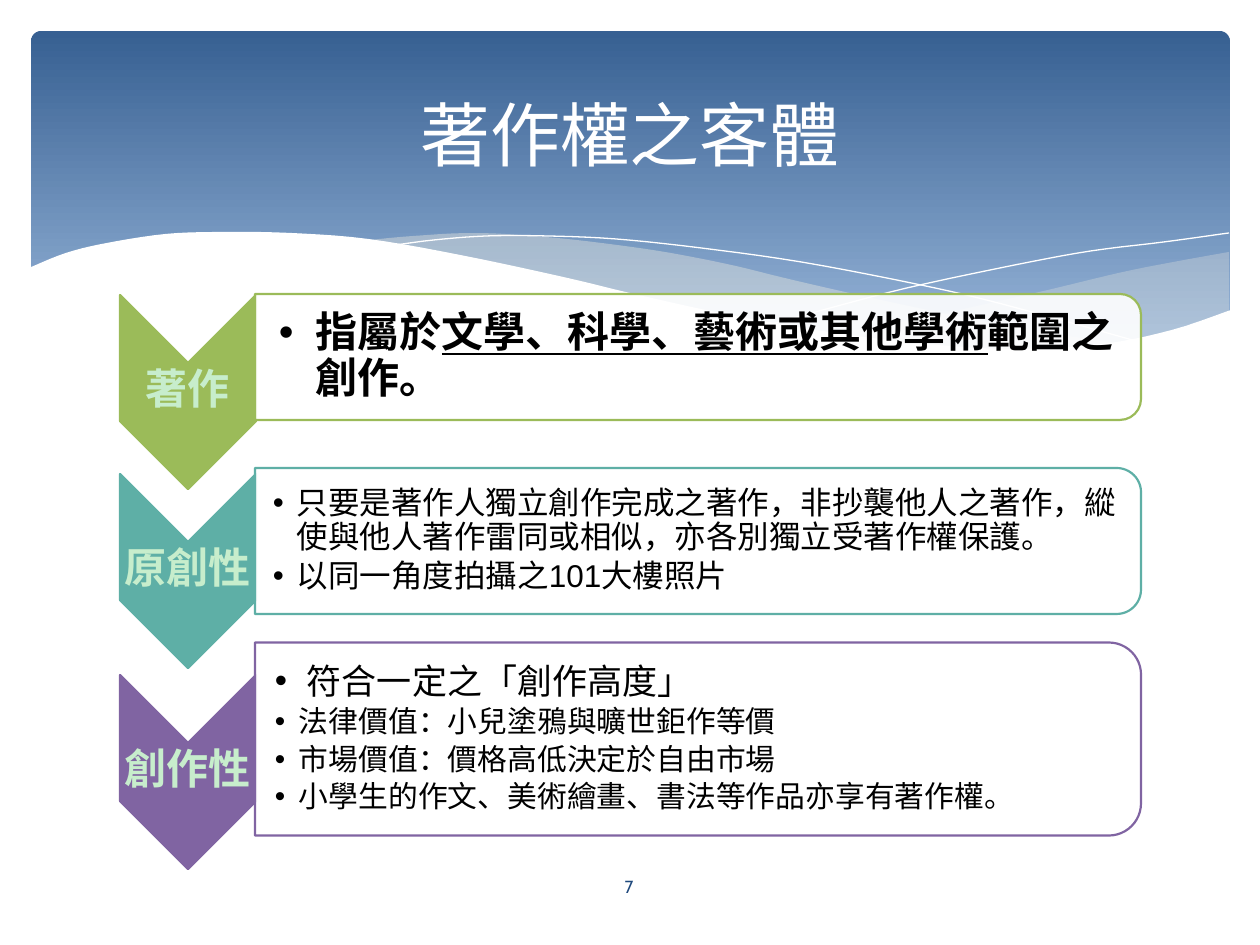
"""Builds the slide on the objects of copyright as three chevron steps under a wave banner."""
from lxml.etree import SubElement
from pptx import Presentation
from pptx.dml.color import RGBColor
from pptx.enum.shapes import MSO_SHAPE
from pptx.enum.text import MSO_ANCHOR, PP_ALIGN
from pptx.oxml.ns import qn
from pptx.util import Pt

PX = 914400 / 126
WHITE = RGBColor(0xFF, 0xFF, 0xFF)
BLACK = RGBColor(0x00, 0x00, 0x00)
MINT = RGBColor(0xC7, 0xED, 0xCC)
SAND = RGBColor(0xEE, 0xEC, 0xE1)
NAVY = RGBColor(0x1F, 0x49, 0x7D)
BANNER_TOP = RGBColor(0x37, 0x60, 0x92)
BANNER_END = RGBColor(0x95, 0xB3, 0xD7)
GREEN = RGBColor(0x9B, 0xBB, 0x59)
TEAL = RGBColor(0x5E, 0xAF, 0xA6)
PURPLE = RGBColor(0x80, 0x64, 0xA2)
CJK = "Noto Sans CJK SC"

RIGHT_BAND_TOP = [(1229, 252), (1179, 261), (1123, 272), (1048, 290), (982, 305),
                  (919, 319), (833, 334)]
RIGHT_BAND_BOTTOM = [(833, 334), (888, 342), (938, 346), (984, 349), (1038, 349),
                     (1087, 347), (1130, 340), (1169, 331), (1213, 317), (1229, 311)]
MIDDLE_BAND_TOP = [(1125, 344), (1055, 334), (977, 320), (890, 302), (793, 280), (736, 266),
                   (682, 255), (632, 247), (557, 238), (479, 233), (413, 236), (360, 241)]
MIDDLE_BAND_BOTTOM = [(360, 241), (431, 251), (509, 266), (566, 280), (668, 302), (757, 322),
                      (838, 335), (910, 345), (974, 349), (1031, 350), (1080, 349), (1125, 344)]
FALLING_LINE = [(389, 246), (434, 240), (487, 236), (546, 236), (616, 239), (701, 248),
                (801, 262), (916, 284), (1002, 304), (1143, 343)]
RISING_LINE = [(772, 324), (823, 310), (907, 288), (1015, 265), (1091, 251), (1164, 242),
               (1229, 233)]
PAGE_WAVE = [(1231, 310), (1172, 330), (1103, 344), (1019, 349), (937, 345), (842, 334),
             (730, 315), (634, 294), (563, 277), (460, 255), (368, 239), (290, 233),
             (223, 232), (166, 234), (107, 243), (66, 253), (29, 268)]
PAGE_EDGE = [(29, 415), (1231, 415)]

STEPS = [
    ("著作", GREEN, 392, 357, 126, 24, [
        (37, [("指屬於", dict(size=24, bold=True)),
              ("文學、科學、藝術或其他學術", dict(size=24, bold=True, underline=True)),
              ("範圍之創作。", dict(size=24, bold=True))])]),
    ("原創性", TEAL, 571, 541, 146, 18, [
        (24, [("只要是著作人獨立創作完成之著作，非抄襲他人之著作，"
               "縱使與他人著作雷同或相似，亦各別獨立受著作權保護。", dict(size=18))]),
        (24, [("以同一角度拍攝之101大樓照片", dict(size=18, name="Arial"))])]),
    ("創作性", PURPLE, 772, 739, 193, 20, [
        (32, [("符合一定之「創作高度」", dict(size=20))]),
        (24, [("法律價值：小兒塗鴉與曠世鉅作等價", dict(size=17))]),
        (24, [("市場價值：價格高低決定於自由市場", dict(size=17))]),
        (24, [("小學生的作文、美術繪畫、書法等作品亦享有著作權。", dict(size=17))])]),
]


def px(length):
    return round(length * PX)


def curve(knots, steps=5):
    """Returns points of a smooth curve through the knots."""
    padded = [knots[0], *knots, knots[-1]]
    points = [knots[0]]
    for a, b, c, d in zip(padded, padded[1:], padded[2:], padded[3:]):
        for step in range(1, steps + 1):
            t = step / steps
            points.append(tuple(
                (2 * q + (r - p) * t + (2 * p - 5 * q + 4 * r - s) * t ** 2
                 + (3 * q - p - 3 * r + s) * t ** 3) / 2
                for p, q, r, s in zip(a, b, c, d)))
    return points


class SlidePainter:
    """Holds the text style and the current slide."""

    style = dict(name=CJK, size=18, bold=False, underline=False)

    def __init__(self, slide):
        self.slide = slide

    def paint(self, shape, fill=None, line=None, width=1.25, opacity=100):
        shape.shadow.inherit = False
        if fill is None:
            shape.fill.background()
        else:
            shape.fill.solid()
            shape.fill.fore_color.rgb = fill
            if opacity < 100:
                tint = shape.fill._xPr.find(qn("a:solidFill"))[0]
                SubElement(tint, qn("a:alpha"), val=str(opacity * 1000))
        if line is None:
            shape.line.fill.background()
        else:
            shape.line.color.rgb = line
            shape.line.width = Pt(width)
        return shape

    def banner(self, left, top, width, height):
        banner = self.slide.shapes.add_shape(
            MSO_SHAPE.ROUNDED_RECTANGLE, px(left), px(top), px(width), px(height))
        self.paint(banner)
        banner.adjustments[0] = 0.03
        banner.fill.gradient()
        banner.fill.gradient_angle = 270
        for stop, color, position in zip(
                banner.fill.gradient_stops, (BANNER_TOP, BANNER_END), (0, 0.9)):
            stop.color.rgb = color
            stop.position = position

    def outline(self, points, close=True, **look):
        start, *rest = [(px(x), px(y)) for x, y in points]
        builder = self.slide.shapes.build_freeform(*start, scale=1.0)
        builder.add_line_segments(rest, close=close)
        self.paint(builder.convert_to_shape(), **look)

    def turned(self, preset, center_x, center_y, width, height, **look):
        """Adds a preset turned a quarter, sized as it shows."""
        shape = self.slide.shapes.add_shape(
            preset, px(center_x - height / 2), px(center_y - width / 2), px(height), px(width))
        shape.rotation = 90
        self.paint(shape, **look)

    def text(self, left, top, width, height, paragraphs, color, inset=(3, 3, 3, 3),
             align=PP_ALIGN.CENTER, spacing=1.0):
        frame = self.slide.shapes.add_textbox(px(left), px(top), px(width), px(height)).text_frame
        settings = dict(word_wrap=True, vertical_anchor=MSO_ANCHOR.MIDDLE)
        settings.update(zip(("margin_left", "margin_top", "margin_right", "margin_bottom"),
                            map(px, inset)))
        for key, value in settings.items():
            setattr(frame, key, value)
        for index, (indent, runs) in enumerate(paragraphs):
            paragraph = frame.add_paragraph() if index else frame.paragraphs[0]
            layout = dict(alignment=align, line_spacing=spacing, space_after=Pt(3 if indent else 0))
            for key, value in layout.items():
                setattr(paragraph, key, value)
            if indent:
                self.bullet(paragraph, indent)
            for words, look in runs:
                self.run(paragraph, words, color, look)

    def bullet(self, paragraph, indent):
        properties = paragraph._p.get_or_add_pPr()
        properties.set("marL", str(px(indent)))
        properties.set("indent", str(-px(indent)))
        SubElement(properties, qn("a:buFont"), typeface="Arial")
        SubElement(properties, qn("a:buChar"), char="•")

    def run(self, paragraph, words, color, look):
        run = paragraph.add_run()
        run.text = words
        font = {**self.style, **look}
        font["size"] = Pt(font["size"])
        for key, value in font.items():
            setattr(run.font, key, value)
        run.font.color.rgb = color
        SubElement(run._r.get_or_add_rPr(), qn("a:ea"), typeface=CJK)

    def step(self, label, accent, chevron_y, box_y, box_height, inset, paragraphs):
        self.turned(MSO_SHAPE.CHEVRON, 188, chevron_y, 136, 194, fill=accent, line=accent)
        self.text(120, chevron_y - 30, 136, 58, [(0, [(label, dict(size=24, bold=True))])],
                  MINT, spacing=0.9)
        self.turned(MSO_SHAPE.ROUND_2_SAME_RECTANGLE, 698, box_y, 886, box_height,
                    fill=WHITE, line=accent, opacity=90)
        self.text(255, box_y - box_height / 2, 879, box_height, paragraphs, BLACK,
                  inset=(inset, 2, 2, 2), align=PP_ALIGN.LEFT, spacing=0.9)


def main():
    presentation = Presentation()
    presentation.slide_width, presentation.slide_height = px(1260), px(945)
    slide = presentation.slides.add_slide(presentation.slide_layouts[6])
    slide.background.fill.solid()
    slide.background.fill.fore_color.rgb = WHITE
    painter = SlidePainter(slide)
    painter.banner(31, 31, 1199, 340)
    painter.outline(curve(RIGHT_BAND_TOP) + curve(RIGHT_BAND_BOTTOM), fill=SAND, opacity=29)
    painter.outline(curve(MIDDLE_BAND_TOP) + curve(MIDDLE_BAND_BOTTOM), fill=SAND, opacity=40)
    for line in (FALLING_LINE, RISING_LINE):
        painter.outline(curve(line), close=False, line=WHITE, width=0)
    painter.outline(curve(PAGE_WAVE) + PAGE_EDGE, fill=WHITE)
    for step in STEPS:
        painter.step(*step)
    painter.text(63, 47, 1134, 173, [(0, [("著作權之客體", dict(size=40))])], WHITE)
    painter.text(549, 862, 160, 50, [(0, [("7", dict(size=10, name="Cabin"))])], NAVY)
    presentation.save("out.pptx")


if __name__ == "__main__":
    main()
